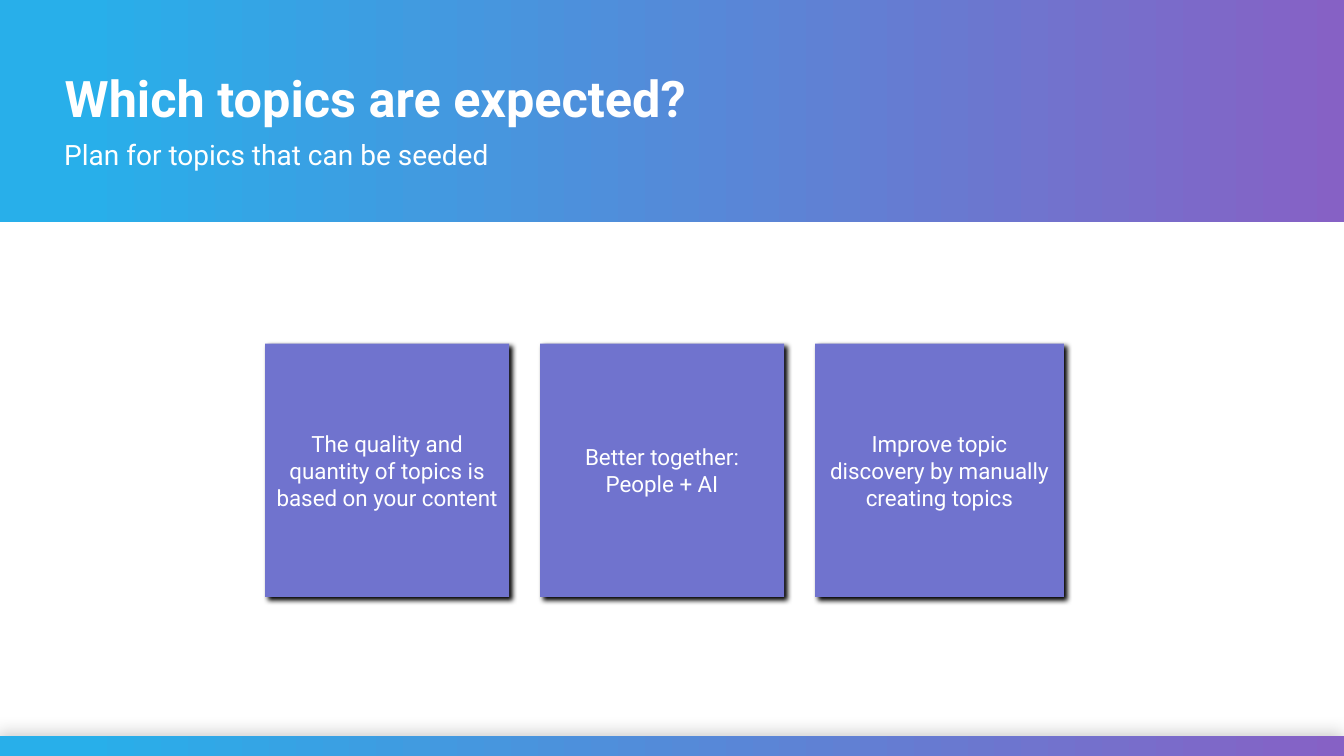
from lxml import etree
from pptx import Presentation
from pptx.dml.color import RGBColor
from pptx.enum import shapes, text
from pptx.oxml import ns
from pptx.util import Cm, Pt

BLUE = RGBColor(0x28, 0xAF, 0xEA)
PURPLE = RGBColor(0x86, 0x61, 0xC5)
CARD_FILL = RGBColor(0x70, 0x73, 0xCE)
WHITE = RGBColor(0xFF, 0xFF, 0xFF)
FONT = "Roboto"

SLIDE_WIDTH, SLIDE_HEIGHT = Cm(33.87), Cm(19.05)
HEADER_HEIGHT, FOOTER_HEIGHT = Cm(5.59), Cm(0.51)
CARD_LEFT, CARD_TOP, CARD_HEIGHT = Cm(6.68), Cm(8.66), Cm(6.38)
CARD_PITCH = Cm(6.93)
CARDS = [
    ("The quality and quantity of topics is based on your content", Cm(6.15)),
    ("Better together: People + AI", Cm(6.15)),
    ("Improve topic discovery by manually creating topics", Cm(6.27)),
]


def add_rectangle(slide, left, top, width, height):
    shape = slide.shapes.add_shape(
        shapes.MSO_SHAPE.RECTANGLE, left, top, width, height)
    shape.line.fill.background()
    shape.shadow.inherit = False
    return shape


def add_shadow(shape, blur, angle, opacity):
    """Cast a black shadow; angle in degrees, opacity in percent."""
    effects = shape._element.spPr.find(ns.qn("a:effectLst"))
    shadow = etree.SubElement(
        effects, ns.qn("a:outerShdw"), blurRad=str(blur), dist=str(Pt(3)),
        dir=str(angle * 60000), algn="tl", rotWithShape="0")
    color = etree.SubElement(shadow, ns.qn("a:srgbClr"), val="000000")
    etree.SubElement(color, ns.qn("a:alpha"), val=str(opacity * 1000))


def add_band(slide, top, height):
    """Add a full-width bar that runs from blue to purple."""
    band = add_rectangle(slide, 0, top, SLIDE_WIDTH, height)
    band.fill.gradient()
    band.fill.gradient_angle = 0
    stops = band.fill.gradient_stops
    for stop, color, position in zip(stops, (BLUE, PURPLE), (0.06, 1)):
        stop.color.rgb = color
        stop.position = position
    return band


def write(shape, wording, size, bold=False, alignment=text.PP_ALIGN.LEFT):
    frame = shape.text_frame
    frame.text = wording
    frame.word_wrap = True
    paragraph = frame.paragraphs[0]
    paragraph.alignment = alignment
    paragraph.font.name = FONT
    paragraph.font.size = Pt(size)
    paragraph.font.bold = bold
    paragraph.font.color.rgb = WHITE
    return frame


def place_title(slide):
    title = slide.shapes.title
    title.left, title.top = Cm(1.63), Cm(1.5)
    title.width, title.height = Cm(30.6), Cm(1.73)
    frame = write(title, "Which topics are expected?", 36, bold=True)
    frame.auto_size = text.MSO_AUTO_SIZE.SHAPE_TO_FIT_TEXT
    frame.vertical_anchor = text.MSO_ANCHOR.TOP
    frame.margin_left = frame.margin_right = frame.margin_bottom = 0
    frame.margin_top = Cm(0.18)
    # Bring the title in front of the header band
    slide.shapes._spTree.append(title._element)


def add_subtitle(slide):
    box = slide.shapes.add_textbox(Cm(1.37), Cm(3.33), Cm(20.55), Cm(1.12))
    frame = write(box, "Plan for topics that can be seeded", 20)
    frame.auto_size = text.MSO_AUTO_SIZE.SHAPE_TO_FIT_TEXT


def add_card(slide, left, width, wording):
    card = add_rectangle(slide, left, CARD_TOP, width, CARD_HEIGHT)
    card.fill.solid()
    card.fill.fore_color.rgb = CARD_FILL
    add_shadow(card, Pt(4), angle=45, opacity=100)
    frame = write(card, wording, 16, alignment=text.PP_ALIGN.CENTER)
    frame.vertical_anchor = text.MSO_ANCHOR.MIDDLE


def main():
    presentation = Presentation()
    presentation.slide_width = SLIDE_WIDTH
    presentation.slide_height = SLIDE_HEIGHT
    slide = presentation.slides.add_slide(presentation.slide_layouts[5])

    add_band(slide, 0, HEADER_HEIGHT)
    footer = add_band(slide, SLIDE_HEIGHT - FOOTER_HEIGHT, FOOTER_HEIGHT)
    add_shadow(footer, Pt(12), angle=225, opacity=20)
    place_title(slide)
    add_subtitle(slide)
    for index, (wording, width) in enumerate(CARDS):
        add_card(slide, CARD_LEFT + index * CARD_PITCH, width, wording)

    presentation.save("out.pptx")


if __name__ == "__main__":
    main()
